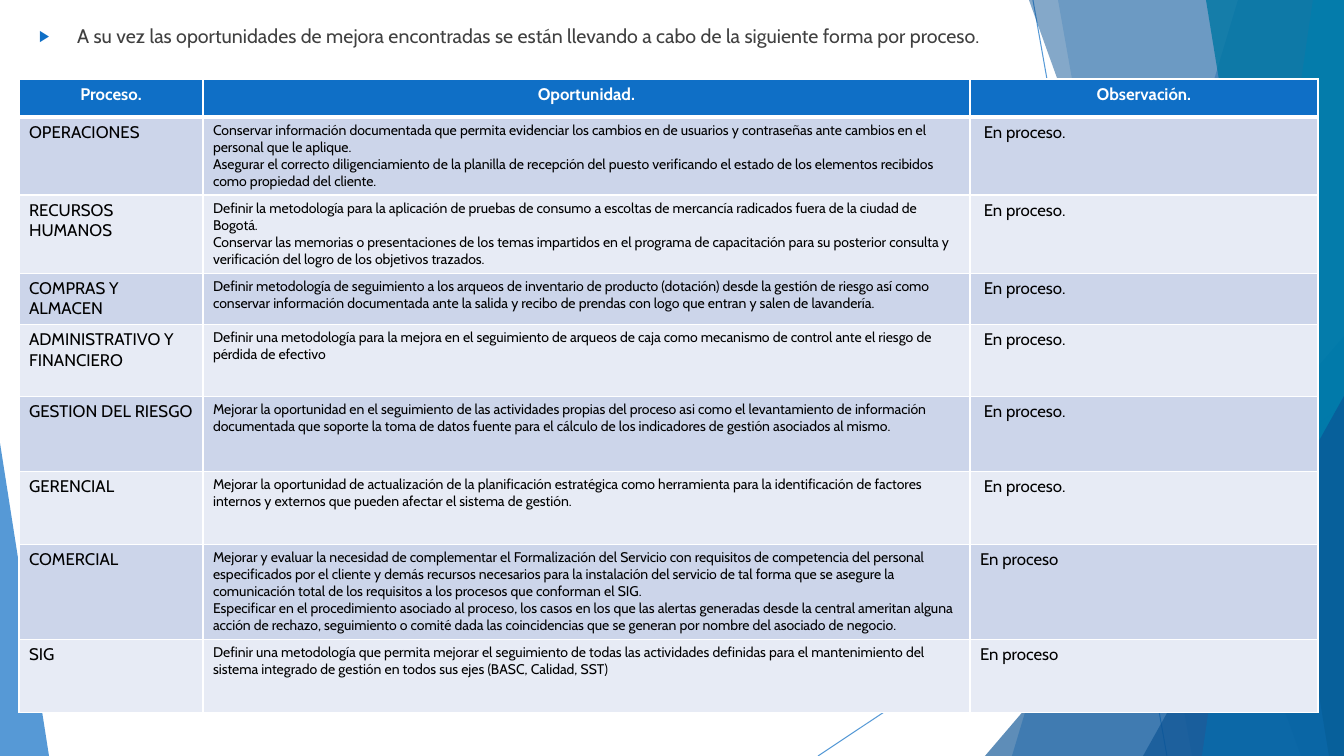
"""Build the slide on improvement opportunities by process."""
from lxml import etree
from pptx import Presentation, util as u
from pptx.dml.color import RGBColor
from pptx.enum import shapes, text
from pptx.oxml import ns

PX = 914400 / 100.8
FONT = "Cabin"
BLUE = RGBColor(0x0F, 0x6F, 0xC6)
NAVY = RGBColor(0x0B, 0x53, 0x94)
CYAN = RGBColor(0x00, 0x9D, 0xD9)
TEAL = RGBColor(0x00, 0x76, 0xA3)
GRAY = RGBColor(0x40, 0x40, 0x40)
BLACK = RGBColor(0, 0, 0)
WHITE = RGBColor(0xFF, 0xFF, 0xFF)
BANDS = (RGBColor(0xCC, 0xD5, 0xEA), RGBColor(0xE7, 0xEB, 0xF5))

INTRO = ("A su vez las oportunidades de mejora encontradas se están llevando a cabo "
         "de la siguiente forma por proceso.")
HEADERS = ("Proceso.", "Oportunidad.", "Observación.")
COLUMN_WIDTHS = (184, 767, 348)
HEADER_HEIGHT = 38
PROCESSES = [
    (78, "OPERACIONES",
     "Conservar información documentada que permita evidenciar los cambios en de usuarios y "
     "contraseñas ante cambios en el personal que le aplique.\n"
     "Asegurar el correcto diligenciamiento de la planilla de recepción del puesto verificando "
     "el estado de los elementos recibidos como propiedad del cliente.", " En proceso."),
    (78, "RECURSOS HUMANOS",
     "Definir la metodología para la aplicación de pruebas de consumo a escoltas de mercancía "
     "radicados fuera de la ciudad de Bogotá.\n"
     "Conservar las memorias o presentaciones de los temas impartidos en el programa de "
     "capacitación para su posterior consulta y verificación del logro de los objetivos "
     "trazados.", " En proceso."),
    (51, "COMPRAS Y ALMACEN",
     "Definir metodología de seguimiento a los arqueos de inventario de producto (dotación) "
     "desde la gestión de riesgo así como conservar información documentada ante la salida y "
     "recibo de prendas con logo que entran y salen de lavandería.", " En proceso."),
    (72, "ADMINISTRATIVO Y FINANCIERO",
     "Definir una metodología para la mejora en el seguimiento de arqueos de caja como "
     "mecanismo de control ante el riesgo de pérdida de efectivo", " En proceso."),
    (75, "GESTION DEL RIESGO",
     "Mejorar la oportunidad en el seguimiento de las actividades propias del proceso asi como "
     "el levantamiento de información documentada que soporte la toma de datos fuente para el "
     "cálculo de los indicadores de gestión asociados al mismo.", " En proceso."),
    (73, "GERENCIAL",
     "Mejorar la oportunidad de actualización de la planificación estratégica como herramienta "
     "para la identificación de factores internos y externos que pueden afectar el sistema de "
     "gestión.", " En proceso."),
    (95, "COMERCIAL",
     "Mejorar y evaluar la necesidad de complementar el Formalización del Servicio con "
     "requisitos de competencia del personal especificados por el cliente y demás recursos "
     "necesarios para la instalación del servicio de tal forma que se asegure la comunicación "
     "total de los requisitos a los procesos que conforman el SIG.\n"
     "Especificar en el procedimiento asociado al proceso, los casos en los que las alertas "
     "generadas desde la central ameritan alguna acción de rechazo, seguimiento o comité dada "
     "las coincidencias que se generan por nombre del asociado de negocio.", "En proceso"),
    (73, "SIG",
     "Definir una metodología que permita mejorar el seguimiento de todas las actividades "
     "definidas para el mantenimiento del sistema integrado de gestión en todos sus ejes "
     "(BASC, Calidad, SST)", "En proceso"),
]


def px(*lengths):
    return [u.Emu(round(length * PX)) for length in lengths]


def add_xml(parent, tag, **attributes):
    return etree.SubElement(parent, ns.qn(tag), attributes)


def set_opacity(part, percent):
    for color in part.element.spPr.iter(ns.qn("a:srgbClr")):
        add_xml(color, "a:alpha", val=str(percent * 1000))


def paint(facet, color, opacity):
    facet.shadow.inherit = False
    facet.fill.solid()
    facet.fill.fore_color.rgb = color
    facet.line.fill.background()
    set_opacity(facet, opacity)


def add_ray(slide, *ends):
    ray = slide.shapes.add_connector(shapes.MSO_CONNECTOR.STRAIGHT, *px(*ends))
    ray.line.color.rgb = BLUE
    ray.line.width = u.Pt(0.75)
    set_opacity(ray, 70)
    add_xml(ray.element.spPr, "a:effectLst")


def add_panel(slide, top_left, bottom_left, color, opacity):
    outline = slide.shapes.build_freeform(top_left, 0, scale=PX)
    outline.add_line_segments([(1344, 0), (1344, 756), (bottom_left, 756)], close=True)
    paint(outline.convert_to_shape(), color, opacity)


def add_corner(slide, box, apex, color, opacity):
    corner = slide.shapes.add_shape(shapes.MSO_SHAPE.ISOSCELES_TRIANGLE, *px(*box))
    corner.adjustments[0] = apex
    paint(corner, color, opacity)


def format_text(frame, size, color, bold=False, align=None):
    for paragraph in frame.paragraphs:
        paragraph.alignment = align
        for run in paragraph.runs:
            run.font.name = FONT
            run.font.size = u.Pt(size)
            run.font.bold = bold
            run.font.color.rgb = color


def place_intro(slide):
    intro = slide.placeholders[1]
    intro.element.getparent().append(intro.element)
    intro.left, intro.top, intro.width, intro.height = px(29, 19, 968, 618)
    frame = intro.text_frame
    frame.text = INTRO
    frame.word_wrap = True
    frame.auto_size = text.MSO_AUTO_SIZE.NONE
    frame.vertical_anchor = text.MSO_ANCHOR.TOP
    format_text(frame, 14, GRAY, align=text.PP_ALIGN.LEFT)
    paragraph = frame.paragraphs[0]
    paragraph.space_before = u.Pt(10)
    bullet = paragraph._p.get_or_add_pPr()
    indent = px(38)[0]
    bullet.set("marL", str(indent))
    bullet.set("indent", str(-indent))
    add_xml(add_xml(bullet, "a:buClr"), "a:srgbClr", val=str(BLUE))
    add_xml(bullet, "a:buSzPct", val="80000")
    add_xml(bullet, "a:buFont", typeface="Arial")
    add_xml(bullet, "a:buChar", char="▶")


def style_cell(cell, fill, bottom_width=1):
    for tag, width in (("a:lnL", 1), ("a:lnR", 1), ("a:lnT", 1), ("a:lnB", bottom_width)):
        border = add_xml(cell._tc.get_or_add_tcPr(), tag, w=str(u.Pt(width)))
        add_xml(add_xml(border, "a:solidFill"), "a:srgbClr", val=str(WHITE))
    cell.fill.solid()
    cell.fill.fore_color.rgb = fill


def add_process_table(slide):
    heights = [HEADER_HEIGHT] + [process[0] for process in PROCESSES]
    frame = slide.shapes.add_table(len(heights), len(HEADERS),
                                   *px(19, 79, sum(COLUMN_WIDTHS), sum(heights)))
    table = frame.table
    for column, width in zip(table.columns, px(*COLUMN_WIDTHS)):
        column.width = width
    for row, height in zip(table.rows, px(*heights)):
        row.height = height
    for cell, header in zip(table.rows[0].cells, HEADERS):
        cell.text_frame.text = header
        format_text(cell.text_frame, 12, WHITE, True, text.PP_ALIGN.CENTER)
        style_cell(cell, BLUE, bottom_width=3)
    for number, (_, *entries) in enumerate(PROCESSES):
        for cell, entry, size in zip(table.rows[number + 1].cells, entries, (12, 10, 12)):
            cell.text_frame.text = entry
            format_text(cell.text_frame, size, BLACK)
            style_cell(cell, BANDS[number % 2])


def add_backdrop(slide):
    add_ray(slide, 1033, 0, 1167, 756)
    add_ray(slide, 1344, 406, 818, 756)
    add_panel(slide, 1238, 1012, BLUE, 36)
    add_panel(slide, 1058, 1192, BLUE, 20)
    add_corner(slide, (985, 336, 359, 420), 1, NAVY, 66)
    add_panel(slide, 1029, 1301, NAVY, 50)
    add_panel(slide, 1313, 1202, CYAN, 70)
    add_panel(slide, 1206, 1329, TEAL, 80)
    add_corner(slide, (1143, 396, 201, 360), 1, NAVY, 66)
    add_corner(slide, (0, 443, 49, 313), 0, BLUE, 70)


def main():
    deck = Presentation()
    deck.slide_width, deck.slide_height = px(1344, 756)
    slide = deck.slides.add_slide(deck.slide_layouts[1])
    title = slide.shapes.title.element
    title.getparent().remove(title)
    add_backdrop(slide)
    place_intro(slide)
    add_process_table(slide)
    deck.save("out.pptx")


if __name__ == "__main__":
    main()
